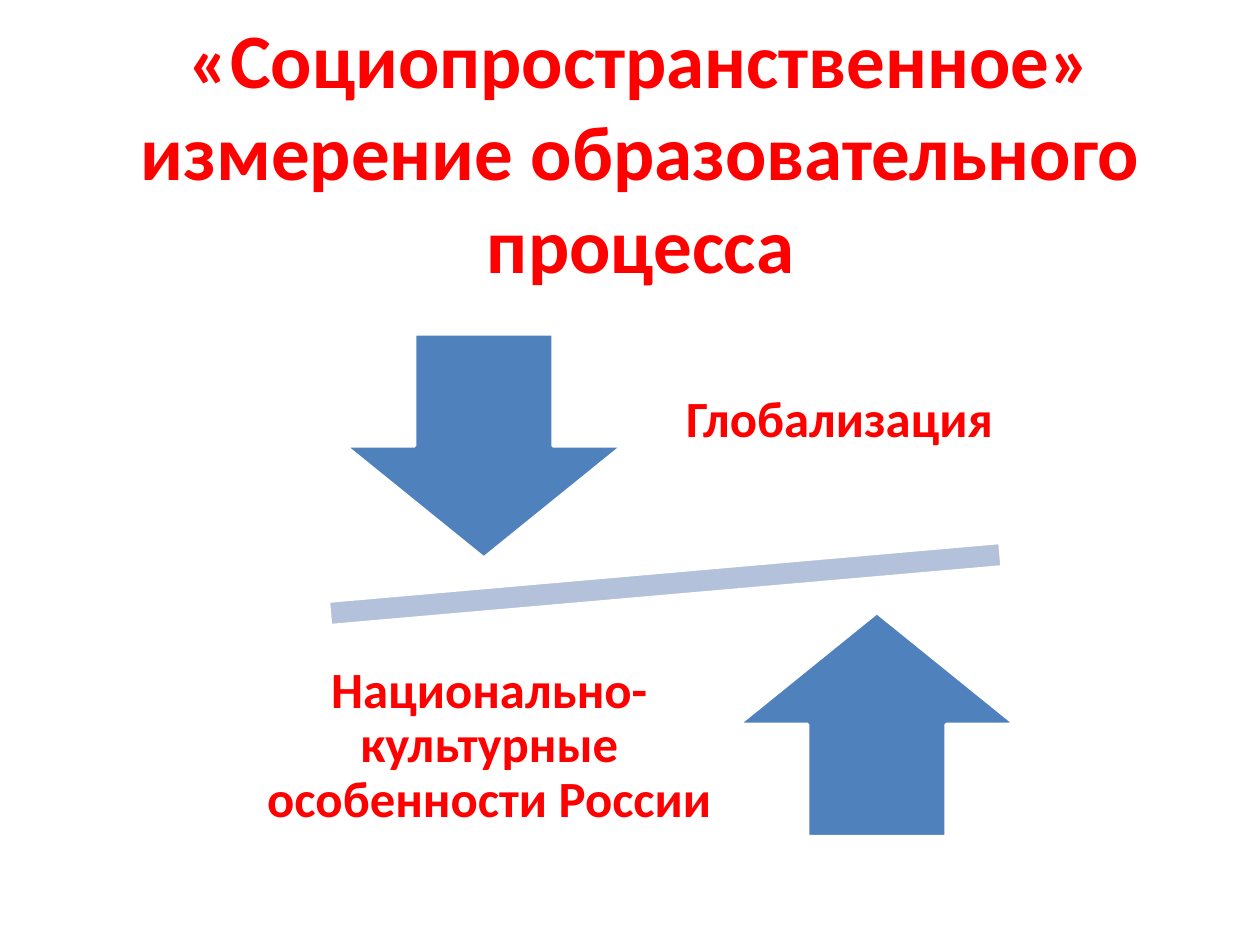
import pptx
import pptx.util
import pptx.dml.color
import pptx.enum.shapes
import pptx.enum.text

COLORS = {"text": "FF0000", "arrow": "4F81BD", "bar": "B3C1DB", "edge": "FFFFFF"}
FONT = "Calibri"
SHAPES = pptx.enum.shapes.MSO_SHAPE


def rgb(name):
    return pptx.dml.color.RGBColor.from_string(COLORS[name])


def write(tf, text, size, inset=None, spacing=None):
    """Fill a text frame with one centred bold paragraph."""
    tf.word_wrap = True
    tf.auto_size = pptx.enum.text.MSO_AUTO_SIZE.NONE
    tf.vertical_anchor = pptx.enum.text.MSO_ANCHOR.MIDDLE
    if inset is not None:
        tf.margin_left = tf.margin_right = pptx.util.Inches(inset)
        tf.margin_top = tf.margin_bottom = pptx.util.Inches(inset)
    p = tf.paragraphs[0]
    p.alignment = pptx.enum.text.PP_ALIGN.CENTER
    if spacing is not None:
        p.line_spacing = spacing
    r = p.add_run()
    r.text = text
    r.font.name, r.font.size, r.font.bold = FONT, pptx.util.Pt(size), True
    r.font.color.rgb = rgb("text")


class Deck:
    """Holds the style and the current slide; boxes are percentages of the slide."""

    title_size, label_size, edge_width = 44, 29, 2

    def __init__(self):
        self.prs = pptx.Presentation()
        self.prs.slide_width = pptx.util.Inches(10)
        self.prs.slide_height = pptx.util.Inches(7.5)
        self.s = self.prs.slides.add_slide(self.prs.slide_layouts[5])

    def box(self, x, y, w, h):
        sw, sh = self.prs.slide_width, self.prs.slide_height
        return [round(v * side / 100) for v, side in ((x, sw), (y, sh), (w, sw), (h, sh))]

    def title(self, text, *box):
        sp = self.s.shapes.title
        sp.left, sp.top, sp.width, sp.height = self.box(*box)
        write(sp.text_frame, text, self.title_size)

    def label(self, text, *box):
        sp = self.s.shapes.add_textbox(*self.box(*box))
        write(sp.text_frame, text, self.label_size, inset=0.23, spacing=0.9)

    def shape(self, kind, color, *box, rotation=0):
        sp = self.s.shapes.add_shape(kind, *self.box(*box))
        sp.shadow.inherit = False
        sp.rotation = rotation
        sp.fill.solid()
        sp.fill.fore_color.rgb = rgb(color)
        sp.line.color.rgb = rgb("edge")
        sp.line.width = pptx.util.Pt(self.edge_width)


def main():
    d = Deck()
    d.title("«Социопространственное» измерение образовательного процесса",
            5.9, 6.93, 89.9, 17.87)

    # Tilted balance bar
    d.shape(SHAPES.MATH_MINUS, "bar", 16.4, 56.27, 72.8, 11.07, rotation=355)

    # Opposing forces, one on each side of the bar
    arrow_size = (22, 23.73)
    d.shape(SHAPES.DOWN_ARROW, "arrow", 27.4, 35.33, *arrow_size)
    d.label("Глобализация", 42.8, 32.13, 47.7, 24.93)
    d.shape(SHAPES.UP_ARROW, "arrow", 58.6, 64.8, *arrow_size)
    d.label("Национально-культурные особенности России", 17, 66.53, 43.7, 24.93)

    d.prs.save("out.pptx")


if __name__ == "__main__":
    main()
